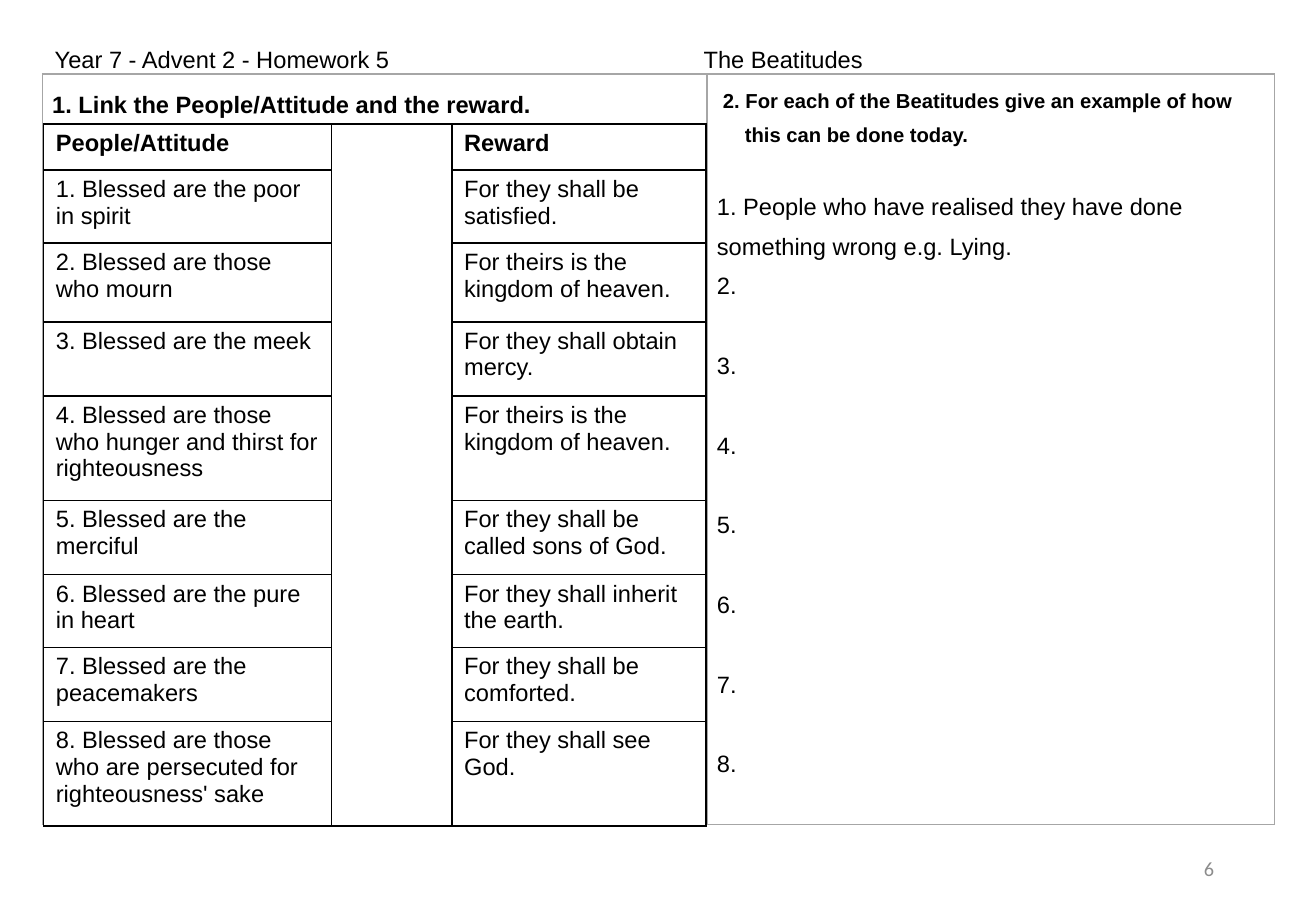
import pptx
import pptx.util
import pptx.dml.color
import pptx.enum.text
import pptx.oxml
import pptx.oxml.ns
from pptx.util import Inches

BLACK = pptx.dml.color.RGBColor(0x00, 0x00, 0x00)
WHITE = pptx.dml.color.RGBColor(0xFF, 0xFF, 0xFF)
RULE_GREY = pptx.dml.color.RGBColor(0xA6, 0xA6, 0xA6)
NUMBER_GREY = pptx.dml.color.RGBColor(0x8C, 0x8C, 0x8C)
ANSWER_GAP = 23.6  # one line of answer space, in points

BEATITUDES = [
    ("People/Attitude", "Reward", 0.38),
    ("1. Blessed are the poor in spirit", "For they shall be satisfied.", 0.6),
    ("2. Blessed are those who mourn", "For theirs is the kingdom of heaven.", 0.65),
    ("3. Blessed are the meek", "For they shall obtain mercy.", 0.61),
    ("4. Blessed are those who hunger and thirst for righteousness",
     "For theirs is the kingdom of heaven.", 0.86),
    ("5. Blessed are the merciful", "For they shall be called sons of God.", 0.61),
    ("6. Blessed are the pure in heart", "For they shall inherit the earth.", 0.6),
    ("7. Blessed are the peacemakers", "For they shall be comforted.", 0.61),
    ("8. Blessed are those who are persecuted for righteousness' sake",
     "For they shall see God.", 0.86),
]


def xml_element(markup):
    return pptx.oxml.parse_xml(markup.replace("NS", pptx.oxml.ns.nsdecls("a"), 1))


class Worksheet:
    """Holds the text style and the slide being filled."""

    def __init__(self, slide, font="Arial", size=14):
        self.slide, self.font, self.size = slide, font, size

    def paragraph(self, frame, text, size=None, bold=False, color=BLACK, font=None,
                  spacing=None, after=0, indent=0):
        """Fill the first paragraph, or add one if it is already used."""
        para = frame.paragraphs[0]
        if para.runs:
            para = frame.add_paragraph()
        para.alignment = pptx.enum.text.PP_ALIGN.LEFT
        para.line_spacing = spacing
        para.space_before = pptx.util.Pt(0)
        para.space_after = pptx.util.Pt(after)
        if indent:
            para._p.get_or_add_pPr().set("marL", str(Inches(indent)))
        span = para.add_run()
        span.text = text
        span.font.name = font or self.font
        span.font.size = pptx.util.Pt(size or self.size)
        span.font.bold = bold
        span.font.color.rgb = color
        return para

    def heading(self, left_text, right_text, tab, left, top, width, height):
        title = self.slide.shapes.title
        title.left, title.top = Inches(left), Inches(top)
        title.width, title.height = Inches(width), Inches(height)
        title.fill.solid()
        title.fill.fore_color.rgb = WHITE
        frame = title.text_frame
        frame.word_wrap = True
        frame.auto_size = pptx.enum.text.MSO_AUTO_SIZE.NONE
        frame.vertical_anchor = pptx.enum.text.MSO_ANCHOR.TOP
        para = self.paragraph(frame, left_text + "\t" + right_text, spacing=1.5)
        para._p.get_or_add_pPr().append(xml_element(
            f'<a:tabLst NS><a:tab pos="{Inches(tab)}" algn="l"/></a:tabLst>'))

    def page_number(self, text, left, top, width, height):
        box = self.slide.shapes.add_textbox(
            Inches(left), Inches(top), Inches(width), Inches(height))
        frame = box.text_frame
        frame.word_wrap = True
        frame.vertical_anchor = pptx.enum.text.MSO_ANCHOR.MIDDLE
        para = self.paragraph(frame, text, size=12, color=NUMBER_GREY, font="Calibri")
        para.alignment = pptx.enum.text.PP_ALIGN.RIGHT

    def table(self, left, top, columns, rows, border):
        frame = self.slide.shapes.add_table(
            len(rows), len(columns), Inches(left), Inches(top),
            Inches(sum(columns)), Inches(sum(rows)))
        table = frame.table
        table.first_row = table.horz_banding = False
        for column, width in zip(table.columns, columns):
            column.width = Inches(width)
        for row, height in zip(table.rows, rows):
            row.height = Inches(height)
        for cell in table.iter_cells():
            properties = cell._tc.get_or_add_tcPr()
            for side in "LRTB":
                properties.append(xml_element(
                    f'<a:ln{side} NS w="12700"><a:solidFill><a:srgbClr val="{border}"/>'
                    f'</a:solidFill></a:ln{side}>'))
            cell.fill.solid()
            cell.fill.fore_color.rgb = WHITE
        return table


def main():
    deck = pptx.Presentation()
    deck.slide_width, deck.slide_height = Inches(10.83), Inches(7.5)
    sheet = Worksheet(deck.slides.add_slide(deck.slide_layouts[5]))

    # Heading and page number
    sheet.heading("Year 7 - Advent 2 - Homework 5", "The Beatitudes",
                  5.34, 0.35, 0.2, 10.36, 0.42)
    sheet.page_number("6", 7.65, 6.95, 2.44, 0.4)

    # Frame with the two tasks
    tasks = sheet.table(0.35, 0.61, [5.47, 4.67], [6.18], RULE_GREY)
    for cell in tasks.iter_cells():
        cell.margin_left = cell.margin_right = Inches(0.08)
        cell.margin_top = cell.margin_bottom = Inches(0.04)
    matching, examples = (cell.text_frame for cell in tasks.iter_cells())
    sheet.paragraph(matching, "1. Link the People/Attitude and the reward.",
                    bold=True, spacing=1.5)
    sheet.paragraph(examples, "2. For each of the Beatitudes give an example of how",
                    size=12, bold=True, spacing=1.5, indent=0.05)
    sheet.paragraph(examples, "this can be done today.",
                    size=12, bold=True, spacing=1.5, indent=0.23, after=20)
    sheet.paragraph(examples, "1. People who have realised they have done "
                    "something wrong e.g. Lying.", spacing=1.5)
    for number in range(2, 9):
        sheet.paragraph(examples, f"{number}.", spacing=1.5,
                        after=ANSWER_GAP if number < 8 else 0)

    # Matching table, with an open middle column for the links
    heights = [height for _, _, height in BEATITUDES]
    links = sheet.table(0.36, 1.02, [2.37, 0.99, 2.09], heights, BLACK)
    links.cell(0, 1).merge(links.cell(len(heights) - 1, 1))
    for row, (people, reward, _) in enumerate(BEATITUDES):
        for column, text in ((0, people), (2, reward)):
            sheet.paragraph(links.cell(row, column).text_frame, text, bold=row == 0)

    deck.save("out.pptx")


if __name__ == "__main__":
    main()
